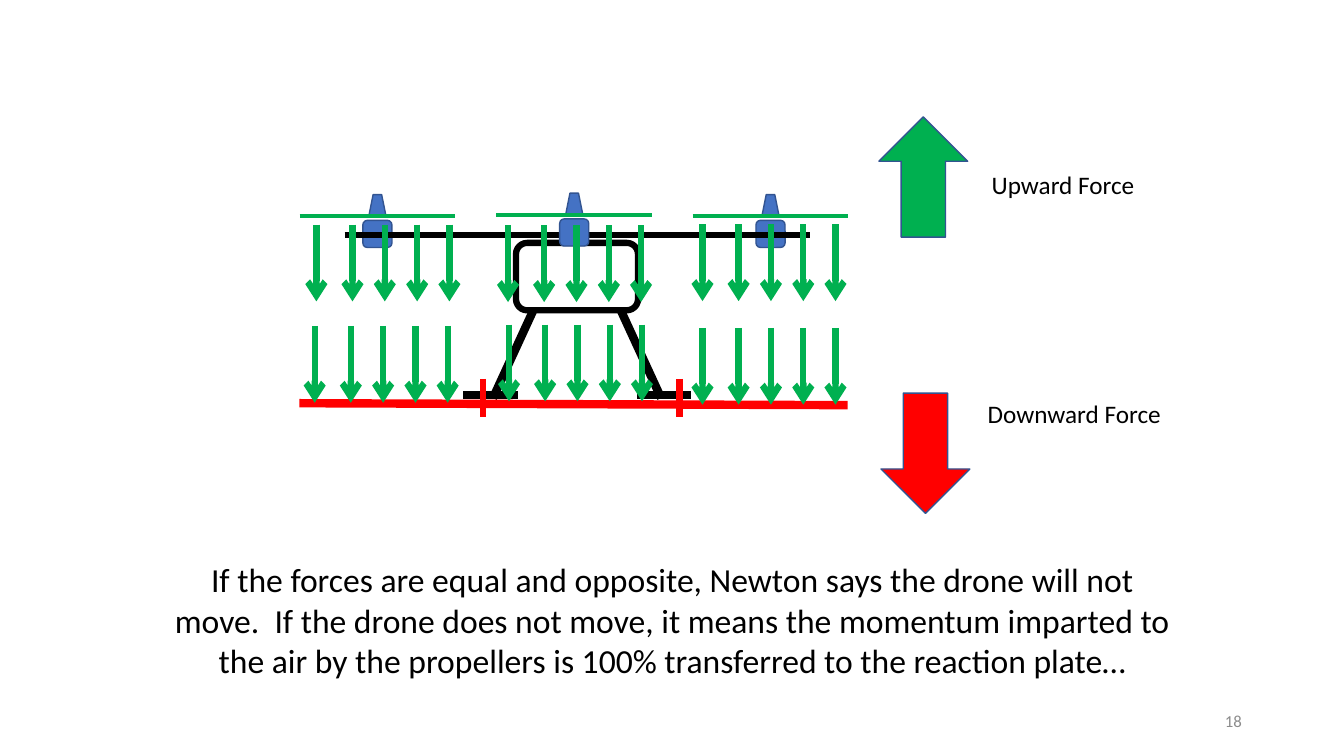
"""Build the drone slide that balances upward and downward force."""
from lxml import etree
from pptx import Presentation
from pptx.dml.color import RGBColor
from pptx.enum.shapes import MSO_CONNECTOR, MSO_SHAPE as SHAPE
from pptx.enum.text import MSO_ANCHOR as ANCHOR, PP_ALIGN as ALIGN
from pptx.oxml.ns import qn
from pptx.util import Pt

BLACK = RGBColor(0x00, 0x00, 0x00)
GREEN = RGBColor(0x00, 0xB0, 0x50)
RED = RGBColor(0xFF, 0x00, 0x00)
BLUE = RGBColor(0x44, 0x72, 0xC4)
NAVY = RGBColor(0x32, 0x54, 0x91)
GREY = RGBColor(0x8C, 0x8C, 0x8C)

prs = Presentation()
prs.slide_width, prs.slide_height = Pt(960), Pt(540)
s = prs.slides.add_slide(prs.slide_layouts[6])


def add_line(x1, y1, x2, y2, color, width, arrow=False):
    ends = [Pt(v) for v in (x1, y1, x2, y2)]
    sp = s.shapes.add_connector(MSO_CONNECTOR.STRAIGHT, *ends)
    sp.line.color.rgb, sp.line.width = color, Pt(width)
    if arrow:
        etree.SubElement(sp.line._get_or_add_ln(), qn("a:tailEnd"), type="arrow")
    etree.SubElement(sp._element.spPr, qn("a:effectLst"))


def add_block(kind, x, y, w, h, fill, line=NAVY, width=1):
    sp = s.shapes.add_shape(kind, Pt(x), Pt(y), Pt(w), Pt(h))
    sp.shadow.inherit = False
    sp.line.color.rgb, sp.line.width = line, Pt(width)
    if fill is None:
        sp.fill.background()
    else:
        sp.fill.solid()
        sp.fill.fore_color.rgb = fill
    return sp


body_x, hub_y = 412.2, 167.8
add_block(SHAPE.ROUNDED_RECTANGLE, body_x - 43.6, 173.5, 87.2, 48.2, None, BLACK, 4.5)
for side in (-1, 1):
    add_line(body_x + side * 31.3, 221.8, body_x + side * 60.1, 284.4, BLACK, 6)
    add_line(body_x + side * 42.5, 282.2, body_x + side * 81.4, 282.2, BLACK, 6)

for center, top in ((269.6, 139), (550.4, 139), (410.2, 138)):
    if center == 410.2:
        add_line(246.2, hub_y, 578.9, hub_y, BLACK, 4.5)
    add_block(SHAPE.TRAPEZOID, center - 6.1, top, 12.2, 15.1, BLUE)
    add_line(center - 55.6, top + 15.3, center + 55.6, top + 15.3, GREEN, 3)
    add_block(SHAPE.ROUNDED_RECTANGLE, center - 10.4, top + 18.4, 20.8, 19.4, BLUE)

add_line(213.8, 288, 605.5, 289.4, RED, 6)
for x in (344.9, 485.3):
    add_line(x, 270.7, x, 298.1, RED, 4.5)

airflow_starts = [
    (501.8, 160.2), (362.9, 160.9), (226, 160.4),
    (501.8, 234.2), (363.6, 231.8), (224.8, 232.8),
]
for left, top in airflow_starts:
    for offset in (0, 25.8, 48.9, 72, 95):
        add_line(left + offset, top, left + offset, top + 54.9, GREEN, 4.5, arrow=True)

for x, y, color, turn in ((627.8, 83.5, GREEN, 0), (629.3, 280.8, RED, 180)):
    add_block(SHAPE.UP_ARROW, x, y, 63.4, 85.9, color).rotation = turn

explanation = (
    "If the forces are equal and opposite, Newton says the drone will not move.  "
    "If the drone does not move, it means the momentum imparted to the air by the "
    "propellers is 100% transferred to the reaction plate…"
)
texts = [
    ("Upward Force", (701.3, 117.4, 169.2, 29), 18, BLACK, ALIGN.LEFT, ANCHOR.TOP),
    ("Downward Force", (698.4, 280.8, 169.2, 29), 18, BLACK, ALIGN.LEFT, ANCHOR.TOP),
    (explanation, (111.6, 396, 737.3, 94.5), 24, BLACK, ALIGN.CENTER, ANCHOR.TOP),
    ("18", (678.2, 500.4, 216, 28.8), 12, GREY, ALIGN.RIGHT, ANCHOR.MIDDLE),
]
for text, box, size, color, align, anchor in texts:
    tf = s.shapes.add_textbox(*[Pt(v) for v in box]).text_frame
    tf.word_wrap, tf.vertical_anchor = True, anchor
    p = tf.paragraphs[0]
    p.alignment = align
    r = p.add_run()
    r.text = text
    for name, value in {"name": "Calibri", "size": Pt(size)}.items():
        setattr(r.font, name, value)
    r.font.color.rgb = color

prs.save("out.pptx")
